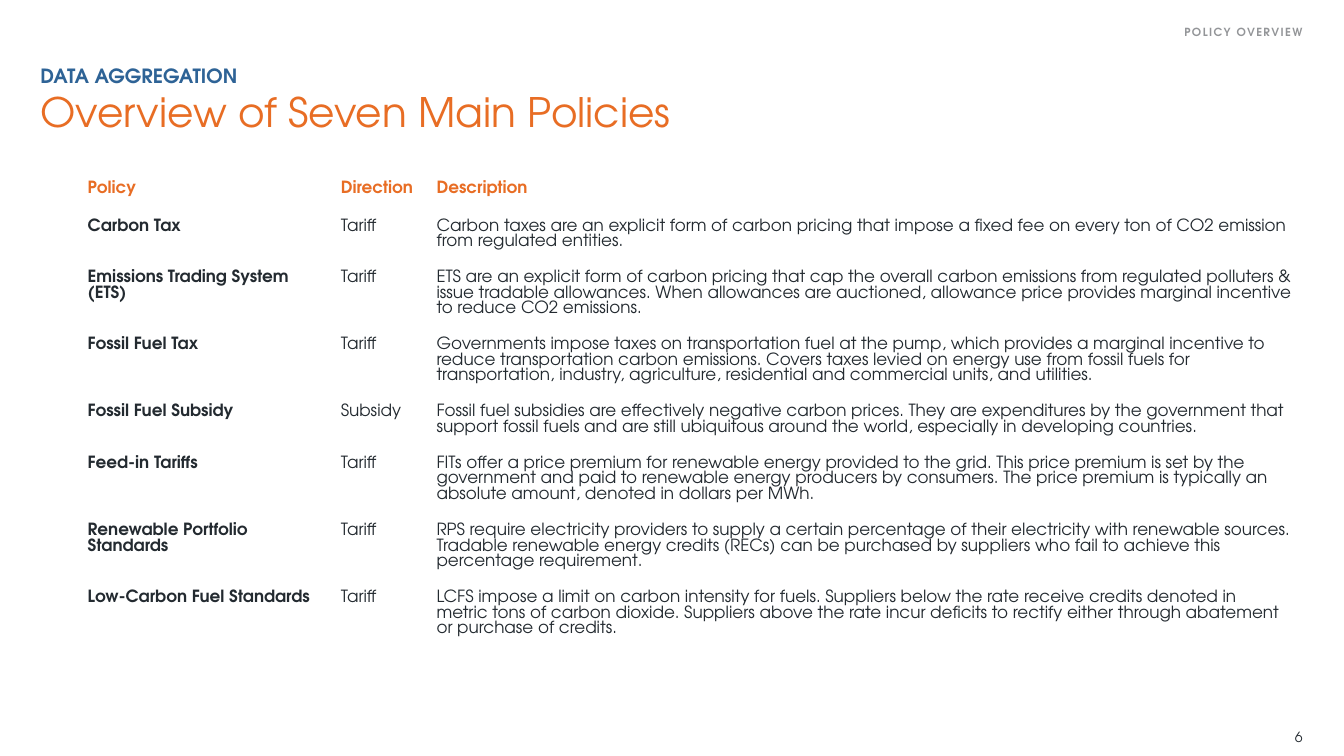
from lxml.etree import SubElement
from pptx import Presentation
from pptx.dml.color import RGBColor
from pptx.enum.text import MSO_ANCHOR, PP_ALIGN
from pptx.util import Inches, Pt

FONT = "TeX Gyre Adventor"
BLUE = RGBColor(0x2E, 0x63, 0x96)
ORANGE = RGBColor(0xE8, 0x6D, 0x24)
GRAY = RGBColor(0x93, 0x95, 0x98)
INK = RGBColor(0x23, 0x2A, 0x30)
WHITE = RGBColor(0xFF, 0xFF, 0xFF)

SECTION = "POLICY OVERVIEW"
KICKER = "DATA AGGREGATION"
HEADLINE = "Overview of Seven Main Policies"
PAGE = "6"
POLICIES = [
    ("Policy", "Direction", "Description"),
    ("Carbon Tax", "Tariff",
     "Carbon taxes are an explicit form of carbon pricing that impose a fixed fee on every ton of "
     "CO2 emission from regulated entities."),
    ("Emissions Trading System (ETS)", "Tariff",
     "ETS are an explicit form of carbon pricing that cap the overall carbon emissions from "
     "regulated polluters & issue tradable allowances. When allowances are auctioned, allowance "
     "price provides marginal incentive to reduce CO2 emissions."),
    ("Fossil Fuel Tax", "Tariff",
     "Governments impose taxes on transportation fuel at the pump, which provides a marginal "
     "incentive to reduce transportation carbon emissions. Covers taxes levied on energy use from "
     "fossil fuels for transportation, industry, agriculture, residential and commercial units, "
     "and utilities."),
    ("Fossil Fuel Subsidy", "Subsidy",
     "Fossil fuel subsidies are effectively negative carbon prices. They are expenditures by the "
     "government that support fossil fuels and are still ubiquitous around the world, especially "
     "in developing countries."),
    ("Feed-in Tariffs", "Tariff",
     "FITs offer a price premium for renewable energy provided to the grid. This price premium is "
     "set by the government and paid to renewable energy producers by consumers. The price premium "
     "is typically an absolute amount, denoted in dollars per MWh."),
    ("Renewable Portfolio Standards", "Tariff",
     "RPS require electricity providers to supply a certain percentage of their electricity with "
     "renewable sources. Tradable renewable energy credits (RECs) can be purchased by suppliers "
     "who fail to achieve this percentage requirement."),
    ("Low-Carbon Fuel Standards", "Tariff",
     "LCFS impose a limit on carbon intensity for fuels. Suppliers below the rate receive credits "
     "denoted in metric tons of carbon dioxide. Suppliers above the rate incur deficits to rectify "
     "either through abatement or purchase of credits."),
]
COLUMN_WIDTHS = (2.51, 0.95, 8.69)
LINES_PER_ROW = (1, 2, 3, 3, 2, 3, 3, 3)
LINE_HEIGHT, CELL_MARGIN = 0.155, 0.1
HEADER_HEIGHT = 0.37
ROW_HEIGHTS = [max(HEADER_HEIGHT, 2 * CELL_MARGIN + lines * LINE_HEIGHT)
               for lines in LINES_PER_ROW]
LEFT, CONTENT_WIDTH = 0.4, 12.52
TABLE_LEFT, TABLE_TOP = 0.77, 1.7


def style(run, size, color, bold=False):
    run.font.name = FONT
    run.font.size = Pt(size)
    run.font.color.rgb = color
    run.font.bold = bold


def place(shape, left, top, width, height, anchor=MSO_ANCHOR.TOP):
    shape.left, shape.top = Inches(left), Inches(top)
    shape.width, shape.height = Inches(width), Inches(height)
    frame = shape.text_frame
    frame.word_wrap = True
    frame.vertical_anchor = anchor
    frame.margin_left = frame.margin_right = 0
    frame.margin_top = frame.margin_bottom = Inches(0.05)
    return frame


def add_headings(slide):
    title = place(slide.shapes.title, LEFT, 0.58, CONTENT_WIDTH, 0.59)
    title.text = f"{KICKER}\v{HEADLINE}"
    heading = title.paragraphs[0]
    heading.alignment = PP_ALIGN.LEFT
    heading.line_spacing = 1.0
    kicker, headline = heading.runs
    style(kicker, 14, BLUE, True)
    style(headline, 29, ORANGE)

    section = place(slide.placeholders[1], LEFT, 0.17, CONTENT_WIDTH, 0.25)
    section.text = SECTION
    label = section.paragraphs[0]
    properties = label._p.get_or_add_pPr()
    properties.set("marL", "0")
    properties.set("indent", "0")
    SubElement(properties, "{http://schemas.openxmlformats.org/drawingml/2006/main}buNone")
    label.alignment = PP_ALIGN.RIGHT
    label.line_spacing = 1.2
    label.space_before = 0
    style(label.runs[0], 8, GRAY, True)
    label.runs[0].font._element.set("spc", "100")


def add_policy_table(slide):
    table = slide.shapes.add_table(
        len(POLICIES), len(COLUMN_WIDTHS), Inches(TABLE_LEFT), Inches(TABLE_TOP),
        Inches(sum(COLUMN_WIDTHS)), Inches(sum(ROW_HEIGHTS))).table
    table.horz_banding = False
    for column, width in zip(table.columns, COLUMN_WIDTHS):
        column.width = Inches(width)
    for r, (policy, height) in enumerate(zip(POLICIES, ROW_HEIGHTS)):
        table.rows[r].height = Inches(height)
        for c, words in enumerate(policy):
            cell = table.cell(r, c)
            cell.fill.solid()
            cell.fill.fore_color.rgb = WHITE
            cell.margin_left = cell.margin_right = Inches(CELL_MARGIN)
            cell.margin_top = cell.margin_bottom = Inches(CELL_MARGIN)
            cell.text = words
            paragraph = cell.text_frame.paragraphs[0]
            style(paragraph.runs[0], 12, ORANGE if r == 0 else INK, r == 0 or c == 0)


def add_page_number(slide):
    frame = place(slide.shapes.add_textbox(0, 0, 0, 0), 12.08, 7.18, 0.84, 0.26,
                  MSO_ANCHOR.MIDDLE)
    frame.text = PAGE
    frame.paragraphs[0].alignment = PP_ALIGN.RIGHT
    style(frame.paragraphs[0].runs[0], 10, INK)


def main():
    deck = Presentation()
    deck.slide_width, deck.slide_height = Inches(13.33), Inches(7.5)
    slide = deck.slides.add_slide(deck.slide_layouts[1])
    add_headings(slide)
    add_policy_table(slide)
    add_page_number(slide)
    deck.save("out.pptx")


if __name__ == "__main__":
    main()
